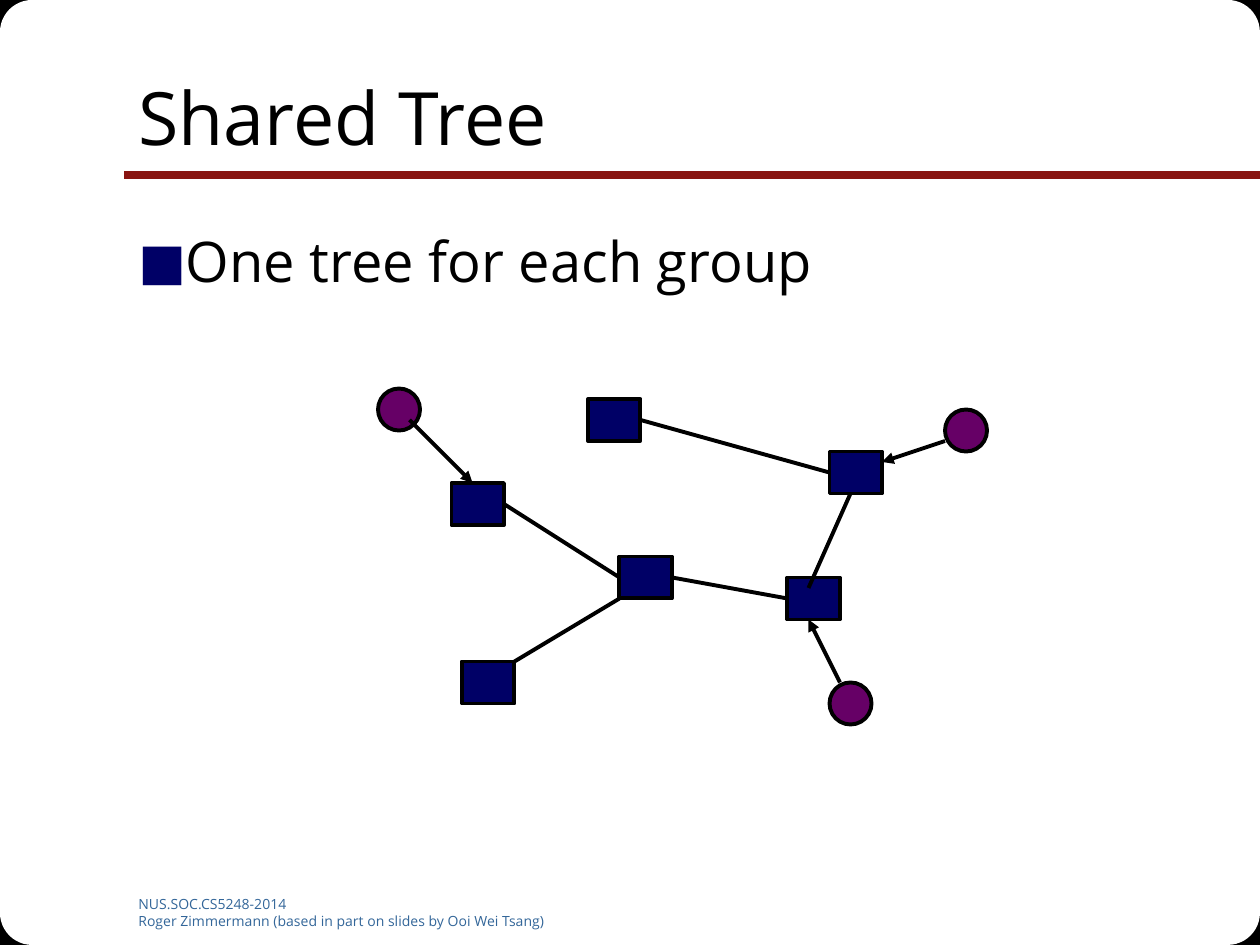
from lxml import etree
from pptx import Presentation
from pptx.dml.color import RGBColor
from pptx.enum.shapes import MSO_CONNECTOR, MSO_SHAPE
from pptx.enum.text import MSO_ANCHOR, PP_ALIGN
from pptx.oxml.ns import qn
from pptx.util import Cm, Pt

RECTANGLE = MSO_SHAPE.RECTANGLE
ROUNDED = MSO_SHAPE.ROUNDED_RECTANGLE
OVAL = MSO_SHAPE.OVAL
STRAIGHT = MSO_CONNECTOR.STRAIGHT
LEFT, RIGHT = 1, 3

FONT = "Open Sans"
COLORS = {
    "black": "000000",
    "white": "FFFFFF",
    "rule": "891411",
    "footer": "336699",
    "router": "000066",
    "host": "660066",
}
WIDTH, HEIGHT = 25.4, 19.05
GRID = 2.54 / 12  # the tree lies on a grid of twelfths of an inch

# Grid positions (left, top)
ROUTERS = {
    "top": (56, 38),
    "center": (59, 53),
    "bottom left": (44, 63),
    "bottom right": (75, 55),
    "left": (43, 46),
    "right": (79, 43),
}
HOSTS = [(90, 39), (79, 65), (36, 37)]
# Links joined from side to side
JOINED_LINKS = [
    ("top", RIGHT, "right", LEFT),
    ("bottom right", LEFT, "center", RIGHT),
    ("left", RIGHT, "center", LEFT),
]
# Links and arrows between free grid points
FREE_LINKS = [(81, 47, 77, 56), (59, 57, 49, 63)]
HOST_ARROWS = [(90, 42, 84, 44), (80, 65, 77, 59), (39, 40, 45, 46)]


def rgb(name):
    return RGBColor.from_string(COLORS[name])


def add_block(slide, kind, left, top, width, height, fill, line_width=None):
    shape = slide.shapes.add_shape(kind, Cm(left), Cm(top), Cm(width), Cm(height))
    shape.shadow.inherit = False
    shape.fill.solid()
    shape.fill.fore_color.rgb = rgb(fill)
    if line_width is None:
        shape.line.fill.background()
    else:
        shape.line.color.rgb = rgb("black")
        shape.line.width = Pt(line_width)
    return shape


def add_line(slide, ends, color="black", width=2.25, arrow=False):
    line = slide.shapes.add_connector(STRAIGHT, *(Cm(value) for value in ends))
    line.line.color.rgb = rgb(color)
    line.line.width = Pt(width)
    if arrow:
        outline = line.line._get_or_add_ln()
        etree.SubElement(outline, qn("a:tailEnd"), type="triangle")
    etree.SubElement(line._element.spPr, qn("a:effectLst"))
    return line


def write_text(frame, lines, size, color):
    frame.word_wrap = True
    frame.text = "\n".join(lines)
    for paragraph in frame.paragraphs:
        paragraph.alignment = PP_ALIGN.LEFT
        paragraph.font.name = FONT
        paragraph.font.size = Pt(size)
        paragraph.font.color.rgb = rgb(color)


def add_text(slide, left, top, width, height, lines, size, color):
    box = slide.shapes.add_textbox(Cm(left), Cm(top), Cm(width), Cm(height))
    write_text(box.text_frame, lines, size, color)
    return box


def add_bullet(paragraph, indent):
    properties = paragraph._p.get_or_add_pPr()
    properties.set("marL", str(Cm(indent)))
    properties.set("indent", str(-Cm(indent)))
    bullet_color = etree.SubElement(properties, qn("a:buClr"))
    etree.SubElement(bullet_color, qn("a:srgbClr"), val=COLORS["router"])
    etree.SubElement(properties, qn("a:buSzPct"), val="90000")
    etree.SubElement(properties, qn("a:buFont"), typeface=FONT)
    etree.SubElement(properties, qn("a:buChar"), char="■")


def add_rounded_corners(slide):
    """Cover black corner squares with white rounded ones."""
    for kind, size, fill, line_width in (
        (RECTANGLE, 1.1, "black", 0.75),
        (ROUNDED, 3.89, "white", None),
    ):
        for left in (0, WIDTH - size):
            for top in (0, HEIGHT - size):
                add_block(slide, kind, left, top, size, size, fill, line_width)


def set_title(slide, text):
    title = slide.shapes.title
    title.left, title.top = Cm(2.54), Cm(0.76)
    title.width, title.height = Cm(21.59), Cm(3.18)
    title.text_frame.vertical_anchor = MSO_ANCHOR.MIDDLE
    write_text(title.text_frame, [text], 42, "black")


def add_tree(slide):
    def on_grid(values):
        return [value * GRID for value in values]

    routers = {
        name: add_block(slide, RECTANGLE, *on_grid((*corner, 5, 4)), "router", 2.25)
        for name, corner in ROUTERS.items()
    }
    for start, start_side, end, end_side in JOINED_LINKS:
        link = add_line(slide, (0, 0, 0, 0))
        link.begin_connect(routers[start], start_side)
        link.end_connect(routers[end], end_side)
    for ends in FREE_LINKS:
        add_line(slide, on_grid(ends))
    for corner in HOSTS:
        add_block(slide, OVAL, *on_grid((*corner, 4, 4)), "host", 2.25)
    for ends in HOST_ARROWS:
        add_line(slide, on_grid(ends), arrow=True)


def main():
    presentation = Presentation()
    presentation.slide_width, presentation.slide_height = Cm(WIDTH), Cm(HEIGHT)
    slide = presentation.slides.add_slide(presentation.slide_layouts[5])

    add_rounded_corners(slide)
    add_line(slide, (WIDTH, 3.53, 2.5, 3.53), "rule", 4.5)
    footer = [
        "NUS.SOC.CS5248-2014",
        "Roger Zimmermann (based in part on slides by Ooi Wei Tsang)",
    ]
    add_text(slide, 2.54, 17.93, 9.53, 0.71, footer, 8, "footer")

    # The title placeholder lies first; bring it in front of the corners
    slide.shapes._spTree.append(slide.shapes.title._element)
    set_title(slide, "Shared Tree")
    body = add_text(slide, 2.54, 4.45, 21.59, 12.57,
                    ["One tree for each group"], 32, "black")
    add_bullet(body.text_frame.paragraphs[0], 0.95)
    add_tree(slide)

    presentation.save("out.pptx")


if __name__ == "__main__":
    main()
